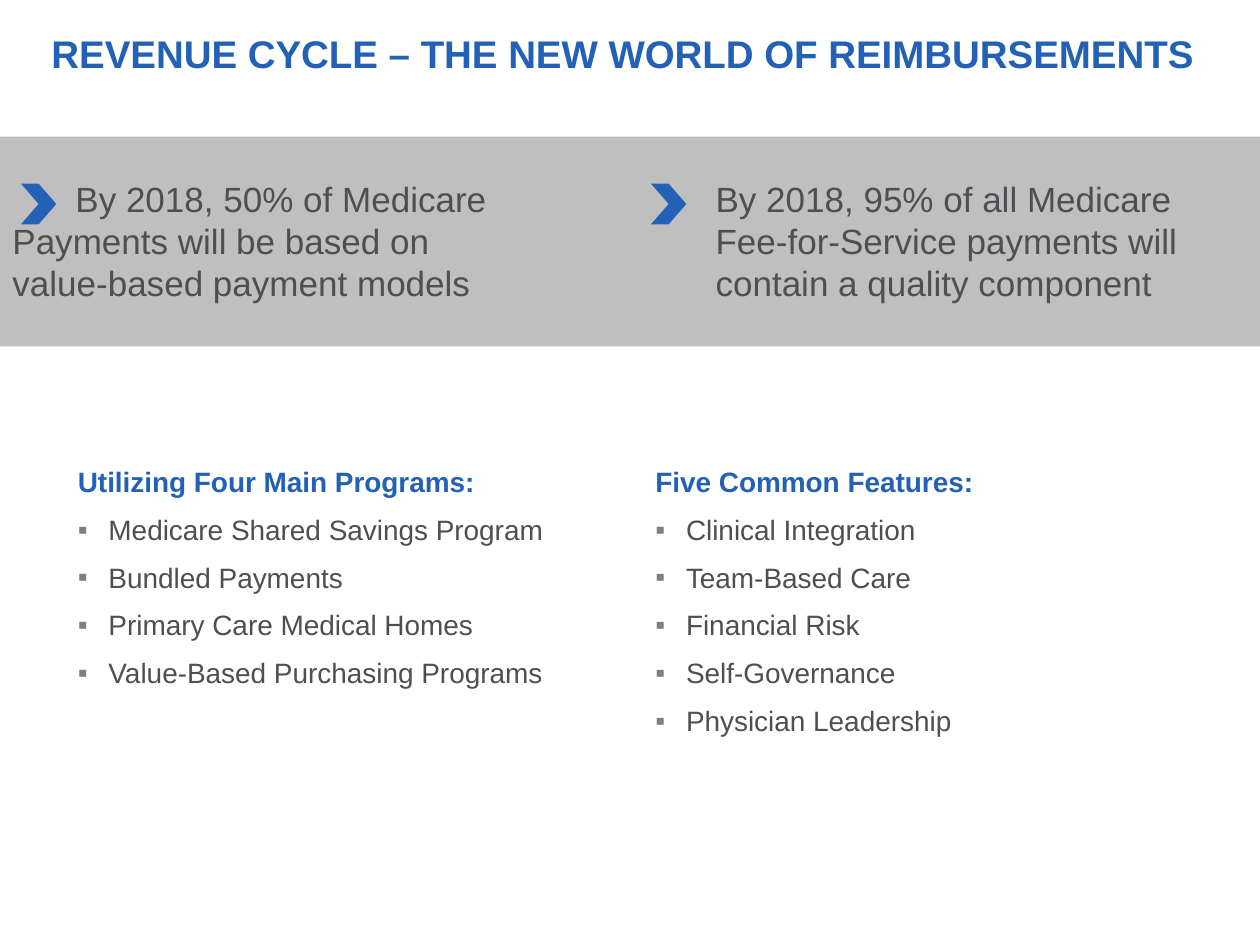
from lxml.etree import SubElement
from pptx import Presentation
from pptx.dml.color import RGBColor
from pptx.enum.shapes import MSO_SHAPE
from pptx.enum.text import MSO_ANCHOR, PP_ALIGN
from pptx.oxml.ns import qn
from pptx.util import Pt

COLORS = {"blue": "2261B5", "band": "BFBFBF", "text": "4D4F53", "bullet": "808080"}
FONT = "Arial"
PROGRAMS = [
    "Medicare Shared Savings Program",
    "Bundled Payments",
    "Primary Care Medical Homes",
    "Value-Based Purchasing Programs",
]
FEATURES = [
    "Clinical Integration",
    "Team-Based Care",
    "Financial Risk",
    "Self-Governance",
    "Physician Leadership",
]


def add_filled_shape(slide, preset, left, top, width, height, color):
    shape = slide.shapes.add_shape(preset, Pt(left), Pt(top), Pt(width), Pt(height))
    shape.shadow.inherit = False
    shape.fill.solid()
    shape.fill.fore_color.rgb = RGBColor.from_string(COLORS[color])
    shape.line.fill.background()


def add_text_frame(slide, left, top, width, height):
    box = slide.shapes.add_textbox(Pt(left), Pt(top), Pt(width), Pt(height))
    frame = box.text_frame
    frame.word_wrap = True
    frame.vertical_anchor = MSO_ANCHOR.TOP
    return frame


def add_run(paragraph, text, size, color, bold=False):
    paragraph.alignment = PP_ALIGN.LEFT
    run = paragraph.add_run()
    run.text = text
    run.font.name = FONT
    run.font.size = Pt(size)
    run.font.bold = bold
    run.font.color.rgb = RGBColor.from_string(COLORS[color])


def set_indent(paragraph, margin, indent):
    properties = paragraph._p.get_or_add_pPr()
    properties.set("marL", str(Pt(margin)))
    properties.set("indent", str(Pt(indent)))


def add_bullet(paragraph):
    properties = paragraph._p.get_or_add_pPr()
    bullet_color = SubElement(properties, qn("a:buClr"))
    SubElement(bullet_color, qn("a:srgbClr"), val=COLORS["bullet"])
    SubElement(properties, qn("a:buFont"), typeface=FONT)
    SubElement(properties, qn("a:buChar"), char="▪")


def add_title(slide, text):
    frame = add_text_frame(slide, 22.3, 13.7, 691, 45.4)
    add_run(frame.paragraphs[0], text, 22, "blue", bold=True)


def add_statement(slide, text, left, width, first_indent=0, right_inset=7.2):
    frame = add_text_frame(slide, left, 98, width, 93.6)
    frame.margin_right = Pt(right_inset)
    paragraph = frame.paragraphs[0]
    paragraph.space_before = Pt(4)
    set_indent(paragraph, 0, first_indent)
    add_run(paragraph, text, 20, "text")


def add_list(slide, heading, items, left):
    frame = add_text_frame(slide, left, 264.2, 286, 185.8)
    add_run(frame.paragraphs[0], heading, 16, "blue", bold=True)
    set_indent(frame.paragraphs[0], 1.4, 0)
    for item in items:
        paragraph = frame.add_paragraph()
        add_run(paragraph, item, 16, "text")
        set_indent(paragraph, 18.9, -17.5)
    for paragraph in frame.paragraphs:
        paragraph.line_spacing = 0.9
        paragraph.space_before = Pt(10)
    for paragraph in frame.paragraphs[1:]:
        add_bullet(paragraph)


def main():
    presentation = Presentation()
    presentation.slide_width = Pt(720)
    presentation.slide_height = Pt(540)
    slide = presentation.slides.add_slide(presentation.slide_layouts[6])

    add_filled_shape(slide, MSO_SHAPE.RECTANGLE, 0, 78, 720, 120, "band")
    add_title(slide, "REVENUE CYCLE – THE NEW WORLD OF REIMBURSEMENTS")
    add_statement(
        slide,
        "By 2018, 50% of Medicare Payments will be based on value-based payment models",
        0, 315.4, first_indent=36, right_inset=20,
    )
    add_statement(
        slide,
        "By 2018, 95% of all Medicare Fee-for-Service payments will contain a quality component",
        401.8, 318.2,
    )
    for left in (12, 372):
        add_filled_shape(slide, MSO_SHAPE.CHEVRON, left, 105, 20.2, 23.2, "blue")
    add_list(slide, "Utilizing Four Main Programs:", PROGRAMS, 36)
    add_list(slide, "Five Common Features:", FEATURES, 366)

    presentation.save("out.pptx")


if __name__ == "__main__":
    main()
